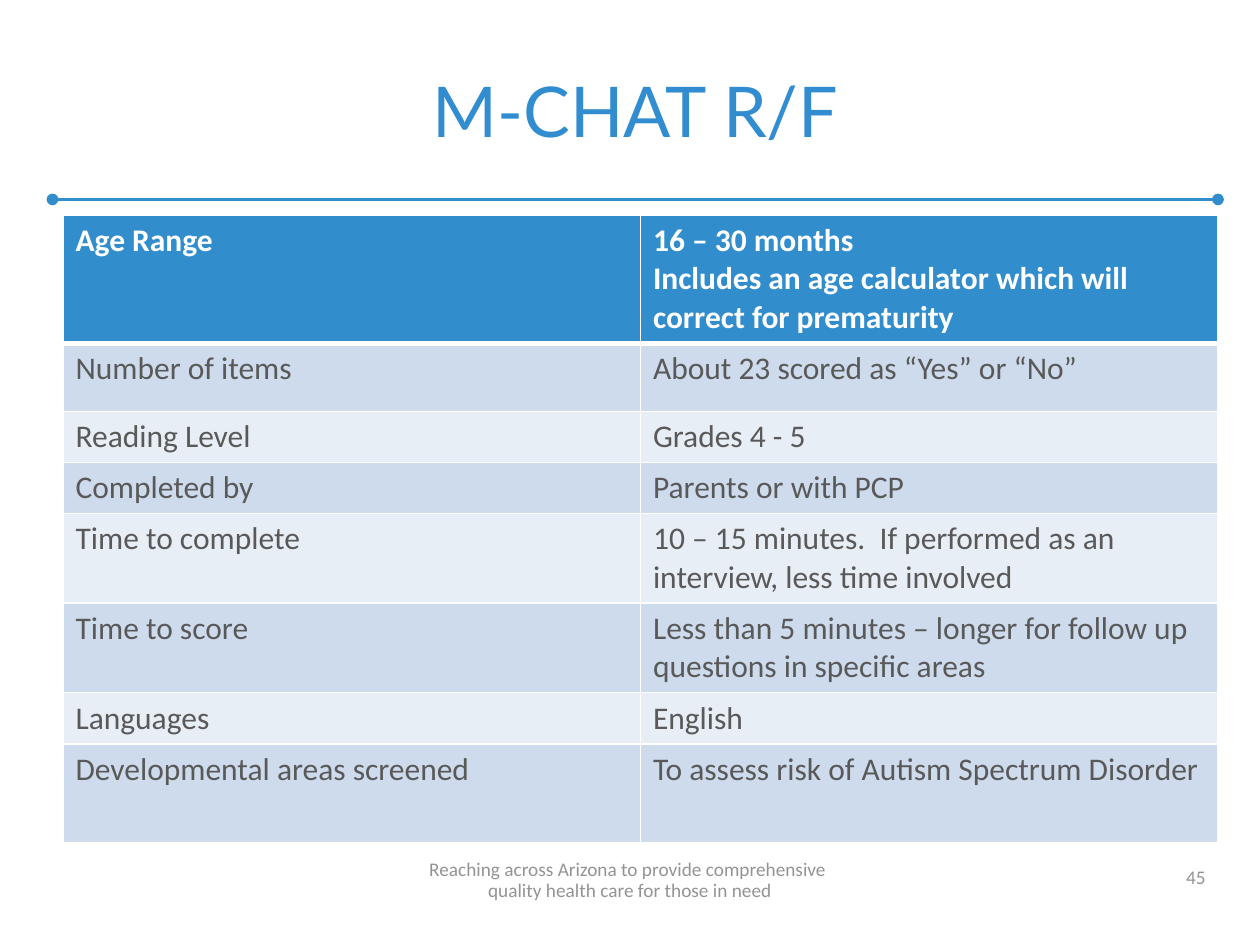
from dataclasses import dataclass

import pptx
import pptx.dml.color
import pptx.enum.dml
import pptx.enum.shapes
import pptx.enum.text
import pptx.oxml.ns
import pptx.util
from lxml import etree

Align = pptx.enum.text.PP_ALIGN
qn = pptx.oxml.ns.qn


@dataclass(frozen=True)
class Theme:
    accent: str = "318DCF"
    header: str = "318DCC"
    bands: tuple[str, str] = ("CEDBEC", "E8EEF6")
    white: str = "FFFFFF"
    body: str = "595959"
    muted: str = "939393"
    title_font: str = "Lato"
    body_font: str = "Calibri"
    title_size: float = 40
    table_size: float = 18
    footer_size: float = 11
    rule_width: float = 2.25
    border_width: float = 1
    header_border_width: float = 3


@dataclass(frozen=True)
class TextStyle:
    font: str
    size: float
    color: str
    bold: bool = False


@dataclass(frozen=True)
class Area:
    column: float
    row: float
    columns: float
    rows: float

    def box(self) -> tuple[int, int, int, int]:
        return grid(self.column), grid(self.row), grid(self.columns), grid(self.rows)


@dataclass(frozen=True)
class Fact:
    label: str
    details: tuple[str, ...]
    rows: float


@dataclass(frozen=True)
class FooterNote:
    lines: tuple[str, ...]
    area: Area
    align: Align
    line_spacing: float | None = None


THEME = Theme()
SLIDE_WIDTH = pptx.util.Inches(10)
SLIDE_HEIGHT = pptx.util.Inches(7.5)
GRID_COLUMNS = 120

TITLE_AREA = Area(6, 4, 109, 11)
TABLE_AREA = Area(6, 20.5, 110, 59)
RULE_START, RULE_END, RULE_ROW = 5, 116, 19

FACTS = (
    Fact("Age Range", ("16 – 30 months",
                       "Includes an age calculator which will correct for prematurity"), 11),
    Fact("Number of items", ("About 23 scored as “Yes” or “No”",), 6.5),
    Fact("Reading Level", ("Grades 4 - 5",), 4.45),
    Fact("Completed by", ("Parents or with PCP",), 4.45),
    Fact("Time to complete",
         ("10 – 15 minutes.  If performed as an interview, less time involved",), 7.7),
    Fact("Time to score",
         ("Less than 5 minutes – longer for follow up questions in specific areas",), 7.7),
    Fact("Languages", ("English",), 4.45),
    Fact("Developmental areas screened", ("To assess risk of Autism Spectrum Disorder",), 9.4),
)

FOOTER_NOTES = (
    FooterNote(("45",), Area(88, 81.4, 28, 3.8), Align.RIGHT),
    FooterNote(("Reaching across Arizona to provide comprehensive ",
                "quality health care for those in need"),
               Area(0, 81.4, 120, 5), Align.CENTER, 12),
)


def grid(units: float) -> int:
    return round(SLIDE_WIDTH * units / GRID_COLUMNS)


def rgb(value: str) -> pptx.dml.color.RGBColor:
    return pptx.dml.color.RGBColor.from_string(value)


def add_run(paragraph, text: str, style: TextStyle) -> None:
    run = paragraph.add_run()
    run.text = text
    run.font.name = style.font
    run.font.size = pptx.util.Pt(style.size)
    run.font.bold = style.bold
    run.font.color.rgb = rgb(style.color)


def add_title(slide, text: str) -> None:
    title = slide.shapes.title
    title.left, title.top, title.width, title.height = TITLE_AREA.box()
    title.text_frame.vertical_anchor = pptx.enum.text.MSO_ANCHOR.BOTTOM
    paragraph = title.text_frame.paragraphs[0]
    paragraph.alignment = Align.CENTER
    add_run(paragraph, text, TextStyle(THEME.title_font, THEME.title_size, THEME.accent))


def add_rule(slide) -> None:
    rule = slide.shapes.add_connector(
        pptx.enum.shapes.MSO_CONNECTOR.STRAIGHT,
        grid(RULE_START), grid(RULE_ROW), grid(RULE_END), grid(RULE_ROW))
    rule.line.color.rgb = rgb(THEME.header)
    rule.line.width = pptx.util.Pt(THEME.rule_width)
    line = rule.line._get_or_add_ln()
    for end in ("a:headEnd", "a:tailEnd"):
        etree.SubElement(line, qn(end), type="oval")
    etree.SubElement(rule._element.spPr, qn("a:effectLst"))


def add_border(cell, side: str, width: float) -> None:
    properties = cell._tc.get_or_add_tcPr()
    line = etree.SubElement(properties, qn(f"a:ln{side}"), w=str(pptx.util.Pt(width)))
    fill = etree.SubElement(line, qn("a:solidFill"))
    etree.SubElement(fill, qn("a:srgbClr"), val=THEME.white)


def fill_cell(cell, lines: tuple[str, ...], row: int) -> None:
    header = row == 0
    heavy_side = {0: "B", 1: "T"}.get(row)
    for side in "LRTB":
        add_border(cell, side,
                   THEME.header_border_width if side == heavy_side else THEME.border_width)
    cell.fill.solid()
    cell.fill.fore_color.rgb = rgb(THEME.header if header else THEME.bands[(row - 1) % 2])
    style = TextStyle(THEME.body_font, THEME.table_size,
                      THEME.white if header else THEME.body, header)
    for index, line in enumerate(lines):
        frame = cell.text_frame
        paragraph = frame.add_paragraph() if index else frame.paragraphs[0]
        add_run(paragraph, line, style)


def add_fact_table(slide, facts: tuple[Fact, ...]) -> None:
    table = slide.shapes.add_table(len(facts), 2, *TABLE_AREA.box()).table
    for column in table.columns:
        column.width = grid(TABLE_AREA.columns / 2)
    for row, fact in enumerate(facts):
        table.rows[row].height = grid(fact.rows)
        fill_cell(table.cell(row, 0), (fact.label,), row)
        fill_cell(table.cell(row, 1), fact.details, row)


def add_footer_note(slide, note: FooterNote) -> None:
    frame = slide.shapes.add_textbox(*note.area.box()).text_frame
    frame.word_wrap = True
    frame.vertical_anchor = pptx.enum.text.MSO_ANCHOR.BOTTOM
    paragraph = frame.paragraphs[0]
    paragraph.alignment = note.align
    if note.line_spacing:
        paragraph.line_spacing = pptx.util.Pt(note.line_spacing)
    for index, line in enumerate(note.lines):
        if index:
            paragraph.add_line_break()
        add_run(paragraph, line, TextStyle(THEME.body_font, THEME.footer_size, THEME.muted))


def main() -> None:
    presentation = pptx.Presentation()
    presentation.slide_width = SLIDE_WIDTH
    presentation.slide_height = SLIDE_HEIGHT
    slide = presentation.slides.add_slide(presentation.slide_layouts[5])
    add_rule(slide)
    add_title(slide, "M-CHAT R/F")
    add_fact_table(slide, FACTS)
    for note in FOOTER_NOTES:
        add_footer_note(slide, note)
    presentation.save("out.pptx")


if __name__ == "__main__":
    main()
